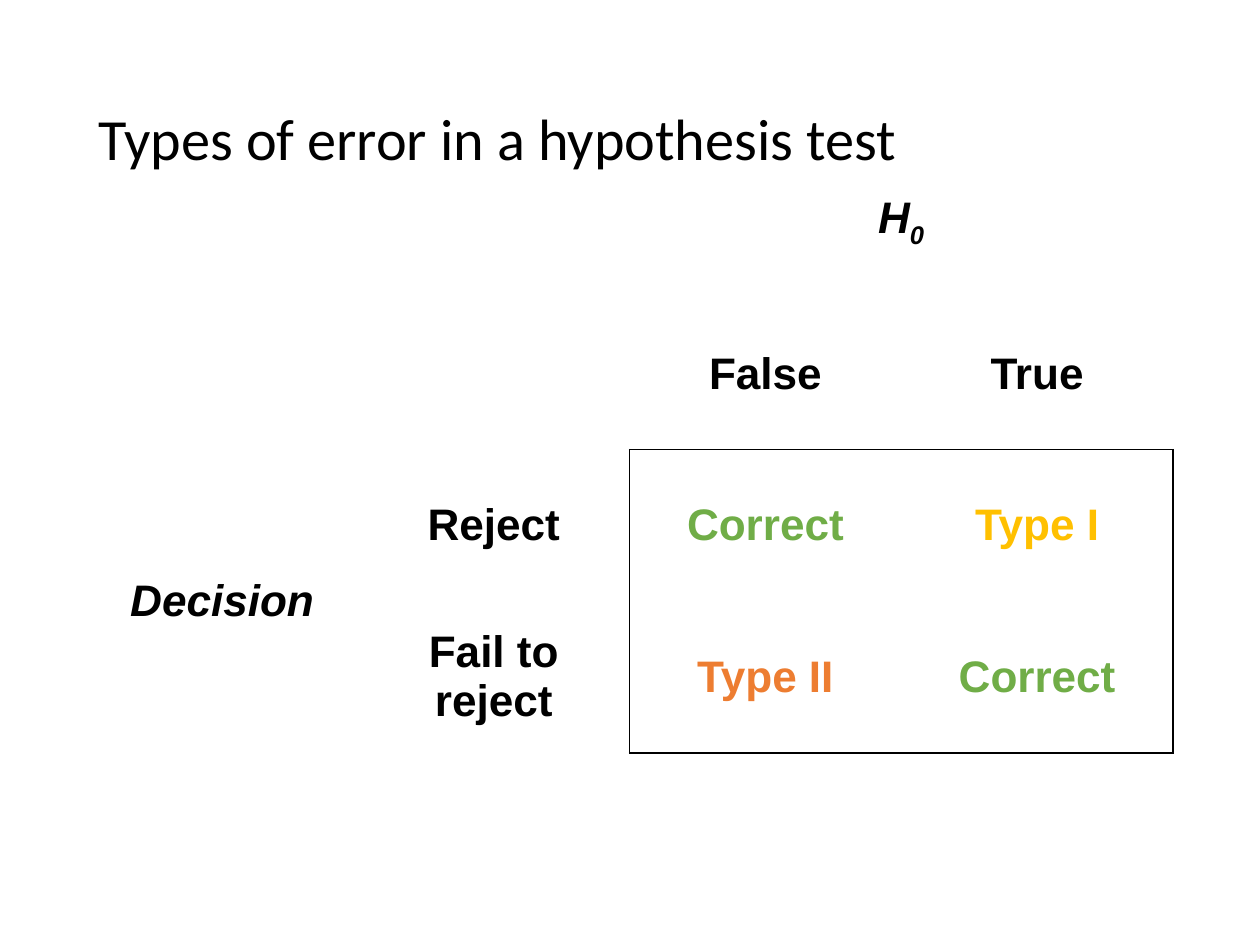
import dataclasses

import lxml.etree
import pptx
import pptx.dml.color
import pptx.enum.text
import pptx.oxml.ns
import pptx.util

Pt = pptx.util.Pt
RGB = pptx.dml.color.RGBColor.from_string
MIDDLE = pptx.enum.text.MSO_ANCHOR.MIDDLE
CENTER = pptx.enum.text.PP_ALIGN.CENTER


@dataclasses.dataclass(frozen=True)
class Theme:
    ink: str = "000000"
    correct: str = "70AD47"
    type_one: str = "FFC000"
    type_two: str = "ED7D31"
    title_font: str = "Calibri"
    table_font: str = "Arial"
    title_size: float = 37
    table_size: float = 28
    rule_width: float = 1


THEME = Theme()
LEFT, WIDTH = 54.7, 690
ROWS = COLUMNS = 4
ROW_HEIGHT = 96.3
# Row, column, text, subscript, colour, italic
ENTRIES = [
    (0, 2, "H", "0", THEME.ink, True),
    (1, 2, "False", "", THEME.ink, False),
    (1, 3, "True", "", THEME.ink, False),
    (2, 0, "Decision", "", THEME.ink, True),
    (2, 1, "Reject", "", THEME.ink, False),
    (2, 2, "Correct", "", THEME.correct, False),
    (2, 3, "Type I", "", THEME.type_one, False),
    (3, 1, "Fail to reject", "", THEME.ink, False),
    (3, 2, "Type II", "", THEME.type_two, False),
    (3, 3, "Correct", "", THEME.correct, False),
]
SIDES = {"lnL": (0, -1), "lnR": (0, 1), "lnT": (-1, 0), "lnB": (1, 0)}


def is_outcome(row, column):
    return 2 <= row < ROWS and 2 <= column < COLUMNS


class SlideBuilder:
    def __init__(self, slide, theme):
        self.slide = slide
        self.theme = theme

    def add_run(self, paragraph, text, color, **font_format):
        run = paragraph.add_run()
        run.text = text
        run.font.color.rgb = RGB(color)
        for name, value in font_format.items():
            setattr(run.font, name, value)
        return run

    def add_title(self, text, left, top, width, height):
        box = self.slide.shapes.add_textbox(Pt(left), Pt(top), Pt(width), Pt(height))
        frame_format = {"word_wrap": True, "vertical_anchor": MIDDLE}
        for side in ("left", "right", "top", "bottom"):
            frame_format[f"margin_{side}"] = Pt(8)
        for name, value in frame_format.items():
            setattr(box.text_frame, name, value)
        heading = box.text_frame.paragraphs[0]
        heading.line_spacing = 0.9
        self.add_run(heading, text, self.theme.ink,
                     name=self.theme.title_font, size=Pt(self.theme.title_size))

    def add_borders(self, cell, row, column):
        """Rule only the edges between the outcome block and its surroundings."""
        qn = pptx.oxml.ns.qn
        properties = cell._tc.get_or_add_tcPr()
        for side, (down, across) in SIDES.items():
            line = lxml.etree.SubElement(properties, qn(f"a:{side}"))
            if is_outcome(row, column) != is_outcome(row + down, column + across):
                line.set("w", str(Pt(self.theme.rule_width)))
                fill = lxml.etree.SubElement(line, qn("a:solidFill"))
                lxml.etree.SubElement(fill, qn("a:srgbClr"), val=self.theme.ink)
            else:
                lxml.etree.SubElement(line, qn("a:noFill"))

    def fill_cell(self, cell, text, subscript, color, italic):
        cell.vertical_anchor = MIDDLE
        label = cell.text_frame.paragraphs[0]
        label.alignment = CENTER
        font_format = {"name": self.theme.table_font, "bold": True,
                       "size": Pt(self.theme.table_size), "italic": italic}
        self.add_run(label, text, color, **font_format)
        if subscript:
            index = self.add_run(label, subscript, color, **font_format)
            index._r.get_or_add_rPr().set("baseline", "-25000")

    def add_error_table(self, entries, left, top, width, row_height):
        table = self.slide.shapes.add_table(
            ROWS, COLUMNS, Pt(left), Pt(top), Pt(width), Pt(row_height * ROWS)).table
        table.first_row = table.horz_banding = False
        for row in range(ROWS):
            for column in range(COLUMNS):
                cell = table.cell(row, column)
                self.add_borders(cell, row, column)
                cell.fill.background()
        table.cell(0, 2).merge(table.cell(0, 3))
        table.cell(2, 0).merge(table.cell(3, 0))
        for row, column, *content in entries:
            self.fill_cell(table.cell(row, column), *content)


def main():
    deck = pptx.Presentation()
    deck.slide_width, deck.slide_height = Pt(800), Pt(600)
    builder = SlideBuilder(deck.slides.add_slide(deck.slide_layouts[6]), THEME)
    builder.add_title("Types of error in a hypothesis test", LEFT, 31.7, WIDTH, 116)
    builder.add_error_table(ENTRIES, LEFT, 92.9, WIDTH, ROW_HEIGHT)
    deck.save("out.pptx")


if __name__ == "__main__":
    main()
